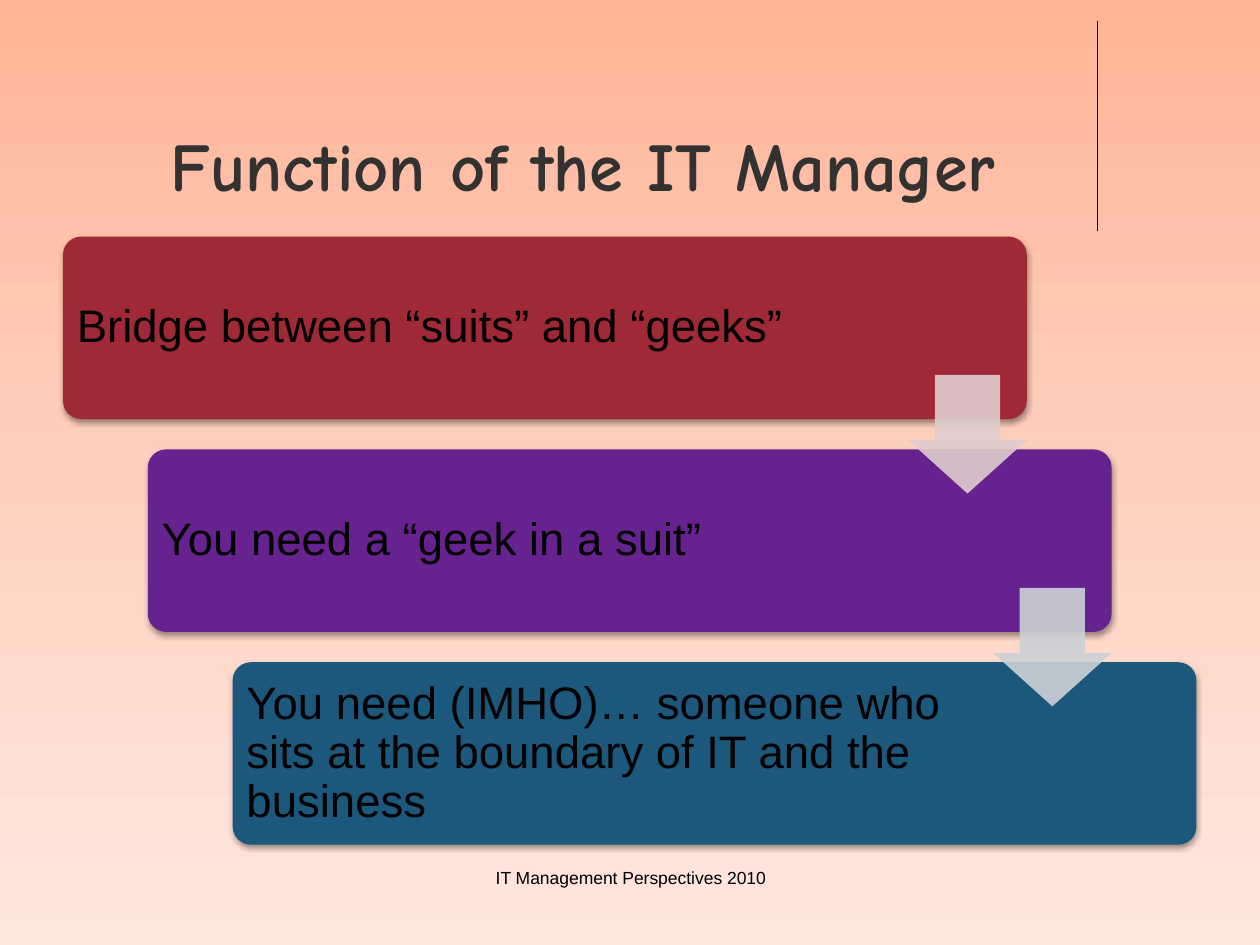
"""Build the slide on the function of the IT manager as a staircase of three steps."""
import copy

import lxml.etree
import pptx
import pptx.dml.color
import pptx.enum.shapes
import pptx.enum.text
import pptx.oxml.ns
import pptx.util

Cm = pptx.util.Cm
Pt = pptx.util.Pt
MSO_SHAPE = pptx.enum.shapes.MSO_SHAPE
ALIGN = pptx.enum.text.PP_ALIGN
ANCHOR = pptx.enum.text.MSO_ANCHOR

COLOURS = {
    "sky": "FFB496", "dusk": "FFD0BF", "ground": "FFE7E0",
    "ink": "000000", "heading": "323232",
    "red": "9F2936", "purple": "66228E", "blue": "1B587C",
    "pink_arrow": "DFCDCE", "grey_arrow": "CCD1D7",
}
BACKGROUND = [("sky", 0), ("dusk", 0.5), ("ground", 1)]
TITLE = "Function of the IT Manager"
FOOTER = "IT Management Perspectives 2010"
STEPS = [
    ("Bridge between “suits” and “geeks”", "red", 15.67),
    ("You need a “geek in a suit”", "purple", 15.32),
    ("You need (IMHO)… someone who sits at the boundary of IT and the business", "blue", 15.32),
]
ARROWS = ["pink_arrow", "grey_arrow"]

LEFT, TOP = 1.27, 4.77
STEP_WIDTH, STEP_HEIGHT = 19.43, 3.68
SHIFT, PITCH = 1.71, 4.29
ARROW_SIZE = 2.39

TITLE_FONT = {"name": "Comic Neue", "size": Pt(39), "bold": True}
STEP_FONT = {"name": "Arial", "size": Pt(26)}
FOOTER_FONT = {"name": "Arial", "size": Pt(10)}
CENTRED = {"alignment": ALIGN.CENTER}
STEP_PARAGRAPH = {"alignment": ALIGN.LEFT, "line_spacing": 0.9}
STEP_FRAME = {"vertical_anchor": ANCHOR.MIDDLE, **{
    f"margin_{side}": Cm(0.28) for side in ("left", "top", "right", "bottom")}}


def rgb(colour):
    return pptx.dml.color.RGBColor.from_string(COLOURS[colour])


def apply(target, values):
    for attribute, value in values.items():
        setattr(target, attribute, value)


def add_child(parent, tag, **attributes):
    child = lxml.etree.SubElement(parent, pptx.oxml.ns.qn(tag))
    for attribute, value in attributes.items():
        child.set(attribute, str(value))
    return child


def add_text(slide, words, box, font, colour, paragraph_format, frame_format):
    frame = slide.shapes.add_textbox(*map(Cm, box)).text_frame
    apply(frame, {"word_wrap": True, **frame_format})
    paragraph = frame.paragraphs[0]
    paragraph.text = words
    apply(paragraph, paragraph_format)
    apply(paragraph.runs[0].font, font)
    paragraph.runs[0].font.color.rgb = rgb(colour)


def add_block(slide, preset, box, colour, adjustments):
    block = slide.shapes.add_shape(preset, *map(Cm, box))
    block.shadow.inherit = False
    block.fill.solid()
    block.fill.fore_color.rgb = rgb(colour)
    block.line.fill.background()
    for index, value in enumerate(adjustments):
        block.adjustments[index] = value
    return block.element.spPr


def paint_background(slide):
    fill = slide.background.fill
    fill.gradient()
    fill.gradient_angle = 270
    stop_list = slide.element.find(".//" + pptx.oxml.ns.qn("a:gsLst"))
    stop_list.insert(1, copy.deepcopy(stop_list[0]))
    for stop, (colour, position) in zip(fill.gradient_stops, BACKGROUND):
        stop.color.rgb = rgb(colour)
        stop.position = position


def add_step(slide, index, words, colour, text_width):
    left, top = LEFT + index * SHIFT, TOP + index * PITCH
    properties = add_block(slide, MSO_SHAPE.ROUNDED_RECTANGLE,
                           (left, top, STEP_WIDTH, STEP_HEIGHT), colour, [0.1])
    effects = properties.find(pptx.oxml.ns.qn("a:effectLst"))
    shadow = add_child(effects, "a:outerShdw", blurRad=Pt(3.1), dist=Pt(1.6),
                       dir=5400000, rotWithShape=0)
    shade = add_child(shadow, "a:srgbClr", val=COLOURS["ink"])
    add_child(shade, "a:alpha", val=38000)
    add_text(slide, words, (left, top, text_width, STEP_HEIGHT),
             STEP_FONT, "ink", STEP_PARAGRAPH, STEP_FRAME)


def add_arrow(slide, index, colour):
    left = LEFT + index * SHIFT + STEP_WIDTH - ARROW_SIZE
    gap_middle = TOP + index * PITCH + (STEP_HEIGHT + PITCH) / 2
    properties = add_block(slide, MSO_SHAPE.DOWN_ARROW,
                           (left, gap_middle - ARROW_SIZE / 2, ARROW_SIZE, ARROW_SIZE),
                           colour, [0.55, 0.45])
    solid = properties.find(pptx.oxml.ns.qn("a:solidFill"))
    add_child(solid[0], "a:alpha", val=90000)
    properties.getparent().txBody.bodyPr.set("wrap", "square")


def add_rule(slide):
    rule = slide.shapes.add_connector(pptx.enum.shapes.MSO_CONNECTOR.STRAIGHT,
                                      Cm(22.12), Cm(0.42), Cm(22.12), Cm(4.65))
    rule.line.color.rgb = rgb("ink")
    rule.line.width = Pt(0.75)
    add_child(rule.element.spPr, "a:effectLst")


def main():
    deck = pptx.Presentation()
    apply(deck, {"slide_width": Cm(25.4), "slide_height": Cm(19.05)})
    slide = deck.slides.add_slide(deck.slide_layouts[6])
    paint_background(slide)
    add_rule(slide)
    add_text(slide, TITLE, (1.27, 0.33, 20.96, 3.94), TITLE_FONT, "heading",
             CENTRED, {"vertical_anchor": ANCHOR.BOTTOM})
    for index, step in enumerate(STEPS):
        add_step(slide, index, *step)
    for index, colour in enumerate(ARROWS):
        add_arrow(slide, index, colour)
    add_text(slide, FOOTER, (8.69, 17.35, 8.05, 1.27), FOOTER_FONT, "ink",
             CENTRED, {"vertical_anchor": ANCHOR.TOP})
    deck.save("out.pptx")


if __name__ == "__main__":
    main()
